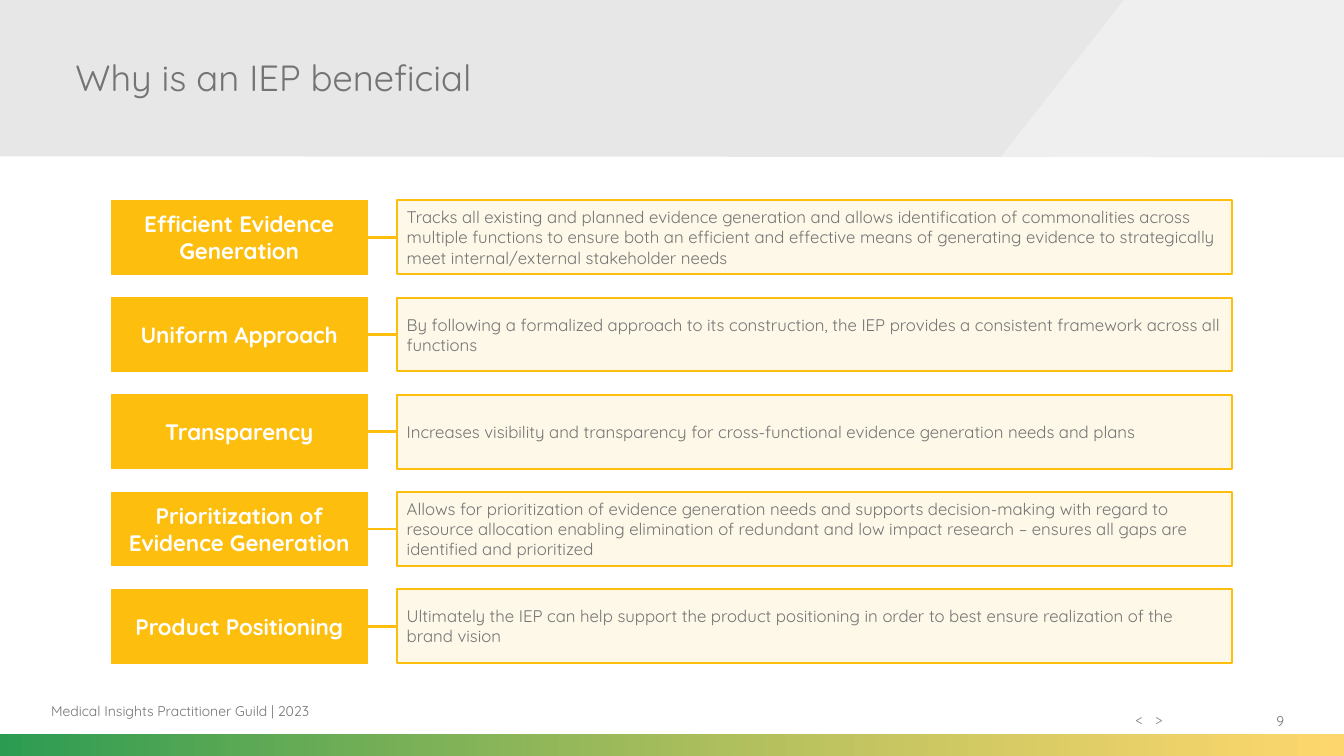
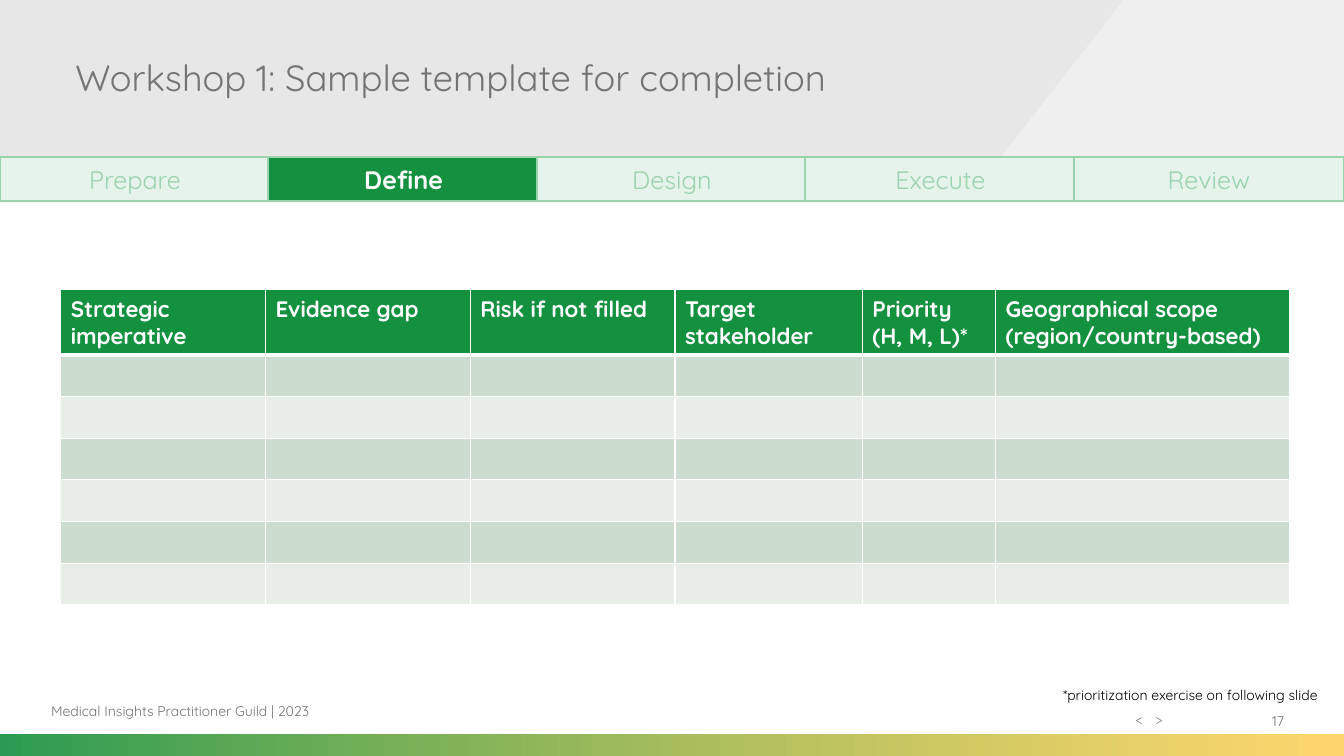
from dataclasses import dataclass

from lxml.etree import SubElement
from pptx import Presentation
from pptx.dml.color import RGBColor
from pptx.enum.shapes import MSO_CONNECTOR, MSO_SHAPE
from pptx.enum.text import MSO_ANCHOR, PP_ALIGN
from pptx.oxml.ns import qn
from pptx.util import Cm, Pt


@dataclass(frozen=True)
class Theme:
    font: str = "Quicksand"
    gray: str = "747474"
    pale: str = "808080"
    black: str = "000000"
    white: str = "FFFFFF"
    band: str = "D9D9D9"
    slant: str = "F2F2F2"
    gold: str = "FEBE0D"
    cream: str = "FEF8E8"
    green: str = "13913F"
    mint: str = "9AD3AD"
    mist: str = "E5F3EA"
    rows: tuple = ("CCDCCF", "E7EEE8")
    title: int = 26
    step: int = 18
    head: int = 16
    body: int = 12
    small: int = 10


LOOK = Theme()
WIDE, HIGH = 33.87, 19.05
BAND = 3.96
FOOT = "Medical Insights Practitioner Guild | 2023"

GAINS = [
    ("Efficient Evidence Generation",
     "Tracks all existing and planned evidence generation and allows identification of "
     "commonalities across multiple functions to ensure both an efficient and effective "
     "means of generating evidence to strategically meet internal/external stakeholder needs"),
    ("Uniform Approach",
     "By following a formalized approach to its construction, the IEP provides a consistent "
     "framework across all functions"),
    ("Transparency",
     "Increases visibility and transparency for cross-functional evidence generation needs "
     "and plans"),
    ("Prioritization of Evidence Generation",
     "Allows for prioritization of evidence generation needs and supports decision-making "
     "with regard to resource allocation enabling elimination of redundant and low impact "
     "research – ensures all gaps are identified and prioritized"),
    ("Product Positioning",
     "Ultimately the IEP can help support the product positioning in order to best ensure "
     "realization of the brand vision"),
]

STEPS = ["Prepare", "Define", "Design", "Execute", "Review"]

HEADS = [
    (["Strategic imperative"], 5.16),
    (["Evidence gap"], 5.16),
    (["Risk if not filled"], 5.16),
    (["Target stakeholder"], 4.72),
    (["Priority", "(H, M, L)*"], 3.36),
    (["Geographical scope (region/country-based)"], 7.42),
]


def tint(code):
    return RGBColor.from_string(code)


def write(frame, lines, size, color, bold=False, align=PP_ALIGN.LEFT):
    for i, line in enumerate(lines):
        para = frame.paragraphs[0] if i == 0 else frame.add_paragraph()
        para.alignment = align
        run = para.add_run()
        run.text = line
        run.font.name = LOOK.font
        run.font.size = Pt(size)
        run.font.bold = bold
        run.font.color.rgb = tint(color)


def add_text(slide, place, text, size, color, align=PP_ALIGN.LEFT,
             anchor=MSO_ANCHOR.MIDDLE, wrap=True):
    frame = slide.shapes.add_textbox(*map(Cm, place)).text_frame
    frame.word_wrap = wrap
    frame.vertical_anchor = anchor
    write(frame, [text], size, color, align=align)
    return frame


def add_box(slide, place, fill, edge, width, text, size, color,
            bold=False, align=PP_ALIGN.CENTER):
    box = slide.shapes.add_shape(MSO_SHAPE.RECTANGLE, *map(Cm, place))
    box.shadow.inherit = False
    box.fill.solid()
    box.fill.fore_color.rgb = tint(fill)
    box.line.color.rgb = tint(edge)
    box.line.width = Pt(width)
    box.text_frame.word_wrap = True
    box.text_frame.vertical_anchor = MSO_ANCHOR.MIDDLE
    write(box.text_frame, [text], size, color, bold, align)
    return box


def join(slide, left, right):
    link = slide.shapes.add_connector(MSO_CONNECTOR.STRAIGHT, 0, 0, 0, 0)
    link.begin_connect(left, 3)
    link.end_connect(right, 1)
    link.line.color.rgb = tint(LOOK.gold)
    link.line.width = Pt(2)
    SubElement(link._element.spPr, qn("a:effectLst"))


def fade(shape, *shares):
    colors = shape._element.spPr.iter(qn("a:srgbClr"))
    for color, share in zip(colors, shares):
        SubElement(color, qn("a:alpha")).set("val", str(share * 1000))


def add_panel(slide, points, color, share):
    spots = [(Cm(x), Cm(y)) for x, y in points]
    path = slide.shapes.build_freeform(*spots[0])
    path.add_line_segments(spots[1:], close=True)
    panel = path.convert_to_shape()
    panel.shadow.inherit = False
    panel.fill.solid()
    panel.fill.fore_color.rgb = tint(color)
    fade(panel, share)
    panel.line.fill.background()


def add_strip(slide):
    strip = slide.shapes.add_shape(
        MSO_SHAPE.RECTANGLE, 0, Cm(18.51), Cm(WIDE), Cm(HIGH - 18.51))
    strip.shadow.inherit = False
    strip.fill.gradient()
    strip.fill.gradient_angle = 0
    for stop, code in zip(strip.fill.gradient_stops, (LOOK.green, LOOK.gold)):
        stop.color.rgb = tint(code)
    fade(strip, 90, 60)
    strip.line.fill.background()


def add_marks(slide):
    frame = add_text(slide, (28.37, 17.78, 1.78, 0.69), "<\t>", LOOK.small,
                     LOOK.pale, anchor=MSO_ANCHOR.TOP)
    tabs = SubElement(frame.paragraphs[0]._p.get_or_add_pPr(), qn("a:tabLst"))
    tab = SubElement(tabs, qn("a:tab"))
    tab.set("pos", str(Cm(0.49)))
    tab.set("algn", "l")


def add_page(deck, title, number):
    slide = deck.slides.add_slide(deck.slide_layouts[6])
    add_panel(slide, [(-0.05, 0), (WIDE, 0), (WIDE, BAND), (-0.05, 3.94)],
              LOOK.band, 62)
    add_panel(slide, [(28.32, 0), (WIDE, 0), (WIDE, 3.94), (25.22, BAND)],
              LOOK.slant, 79)
    add_strip(slide)
    add_text(slide, (30.3, 17.65, 2.31, 1.02), str(number), LOOK.small,
             LOOK.gray, PP_ALIGN.RIGHT)
    add_marks(slide)
    add_text(slide, (1.04, 17.4, 10.72, 1.02), FOOT, LOOK.small, LOOK.gray)
    add_text(slide, (1.65, 0, 25.4, 3.89), title, LOOK.title, LOOK.gray)
    return slide


def add_gains(slide):
    for i, (name, detail) in enumerate(GAINS):
        top = 5.05 + i * 2.45
        box = add_box(slide, (10, top, 21.06, 1.86), LOOK.cream, LOOK.gold, 1.5,
                      detail, LOOK.body, LOOK.gray, align=PP_ALIGN.LEFT)
        label = add_box(slide, (2.8, top, 6.46, 1.86), LOOK.gold, LOOK.gold, 0.75,
                        name, LOOK.head, LOOK.white, True)
        join(slide, label, box)


def add_steps(slide, active):
    width = 6.81
    pitch = (WIDE - width) / (len(STEPS) - 1)
    for i, name in enumerate(STEPS):
        on = name == active
        add_box(slide, (i * pitch, BAND, width, 1.1),
                LOOK.green if on else LOOK.mist, LOOK.mint, 1.5, name, LOOK.step,
                LOOK.white if on else LOOK.mint, on)


def paint(cell, fill, top, base):
    props = cell._tc.get_or_add_tcPr()
    for side, width in (("L", 1), ("R", 1), ("T", top), ("B", base)):
        line = SubElement(props, qn("a:ln" + side))
        line.set("w", str(Pt(width)))
        solid = SubElement(line, qn("a:solidFill"))
        SubElement(solid, qn("a:srgbClr")).set("val", LOOK.white)
    cell.fill.solid()
    cell.fill.fore_color.rgb = tint(fill)


def add_grid(slide, count):
    head, row = 1.64, 1.05
    width = sum(size for _, size in HEADS)
    grid = slide.shapes.add_table(
        count + 1, len(HEADS), Cm(1.53), Cm(7.3), Cm(width),
        Cm(head + count * row)).table
    for r, line in enumerate(grid.rows):
        line.height = Cm(row if r else head)
        fill = LOOK.rows[(r - 1) % 2] if r else LOOK.green
        for cell in line.cells:
            paint(cell, fill, 3 if r == 1 else 1, 1 if r else 3)
    for c, (lines, size) in enumerate(HEADS):
        grid.columns[c].width = Cm(size)
        write(grid.cell(0, c).text_frame, lines, LOOK.head, LOOK.white, True)


def main():
    deck = Presentation()
    deck.slide_width, deck.slide_height = Cm(WIDE), Cm(HIGH)
    add_gains(add_page(deck, "Why is an IEP beneficial", 9))
    slide = add_page(deck, "Workshop 1: Sample template for completion", 17)
    add_grid(slide, 6)
    add_steps(slide, "Define")
    add_text(slide, (26.54, 17.17, 7.26, 0.69),
             "*prioritization exercise on following slide", LOOK.small,
             LOOK.black, anchor=MSO_ANCHOR.TOP, wrap=False)
    deck.save("out.pptx")


if __name__ == "__main__":
    main()
